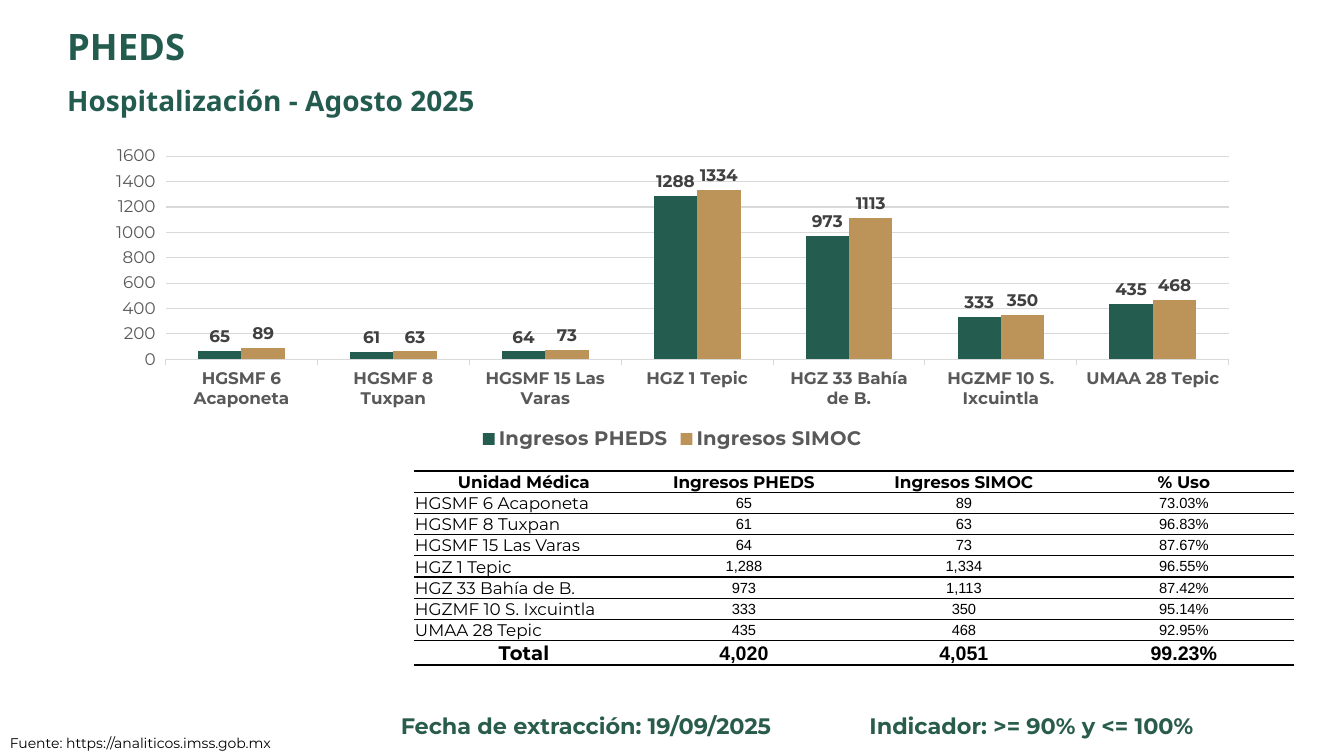
from lxml import etree
from pptx import Presentation
from pptx.chart.data import CategoryChartData as Data
from pptx.dml.color import RGBColor as Rgb
from pptx.enum.chart import XL_CHART_TYPE as Kind, XL_LABEL_POSITION as Spot
from pptx.enum.chart import XL_LEGEND_POSITION as Side, XL_TICK_MARK as Tick
from pptx.enum.text import MSO_ANCHOR as Anchor, MSO_AUTO_SIZE as Fit, PP_ALIGN as Align
from pptx.oxml.ns import qn
from pptx.util import Emu, Pt

HUES = {"title": "235C4F", "note": "2A5C4B", "pheds": "245C4F", "simoc": "BC945A",
        "grid": "D9D9D9", "axis": "595959", "label": "404040", "ink": "000000"}
UNITS = [("HGSMF 6 Acaponeta", 65, 89), ("HGSMF 8 Tuxpan", 61, 63),
         ("HGSMF 15 Las Varas", 64, 73), ("HGZ 1 Tepic", 1288, 1334),
         ("HGZ 33 Bahía de B.", 973, 1113), ("HGZMF 10 S. Ixcuintla", 333, 350),
         ("UMAA 28 Tepic", 435, 468)]
NAMES = ("Ingresos PHEDS", "Ingresos SIMOC")


def px(n):
    return Emu(round(n * 914400 / 100.8))


class Deck:
    """Builds one slide in a shared style, with lengths in px."""

    def __init__(self, wide, high):
        self.prs = Presentation()
        self.prs.slide_width, self.prs.slide_height = px(wide), px(high)
        self.slide = self.prs.slides.add_slide(self.prs.slide_layouts[0])
        self.face = "Montserrat"

    def font(self, font, size, hue, bold=False, face=None):
        font.name, font.size, font.bold = face or self.face, Pt(size), bold
        font.color.rgb = Rgb.from_string(HUES[hue])

    def head(self, spot, text, box, size):
        shape = self.slide.placeholders[spot]
        shape.left, shape.top, shape.width, shape.height = map(px, box)
        frame = shape.text_frame
        frame.text, frame.vertical_anchor = text, Anchor.TOP
        frame.auto_size = Fit.NONE
        para = frame.paragraphs[0]
        para.alignment, para.line_spacing, para.space_before = Align.LEFT, 0.9, Pt(0)
        self.font(para.font, size, "title", True, "Noto Sans")

    def note(self, text, box, size, hue, bold=False, align=Align.LEFT, wrap=True):
        frame = self.slide.shapes.add_textbox(*map(px, box)).text_frame
        frame.text, frame.word_wrap = text, wrap
        frame.auto_size = Fit.SHAPE_TO_FIT_TEXT
        para = frame.paragraphs[0]
        para.alignment = align
        self.font(para.font, size, hue, bold)

    def cell(self, cell, text, size, bold, face, align, anchor):
        cell.text, cell.vertical_anchor = text, anchor
        cell.margin_left = cell.margin_right = cell.margin_top = px(1)
        cell.margin_bottom = 0
        para = cell.text_frame.paragraphs[0]
        para.alignment = align
        self.font(para.font, size, "ink", bold, face)
        props = cell._tc.get_or_add_tcPr()
        for side in "LRTB":
            line = etree.SubElement(props, qn(f"a:ln{side}"), w=str(Pt(1)))
            if side in "LR":
                etree.SubElement(line, qn("a:noFill"))
            else:
                fill = etree.SubElement(line, qn("a:solidFill"))
                etree.SubElement(fill, qn("a:srgbClr"), val=HUES["ink"])
        cell.fill.background()

    def table(self, rows, box, highs):
        grid = self.slide.shapes.add_table(len(rows), len(rows[0]), *map(px, box)).table
        grid.first_row = grid.horz_banding = False
        last = len(rows) - 1
        for r, row in enumerate(rows):
            grid.rows[r].height = px(highs[r])
            edge = r in (0, last)
            for c, text in enumerate(row):
                name = c == 0 and not edge
                face = self.face if c == 0 or r == 0 else "Arial"
                size = 14 if r == last else 12 if name or edge else 10.5
                self.cell(grid.cell(r, c), text, size, edge, face,
                          Align.LEFT if name else Align.CENTER,
                          Anchor.TOP if name else Anchor.MIDDLE)

    def line(self, line, hue):
        line.color.rgb, line.width = Rgb.from_string(HUES[hue]), Pt(0.75)

    def chart(self, units, names, hues, box):
        data = Data()
        data.categories = [unit[0] for unit in units]
        for i, name in enumerate(names, 1):
            data.add_series(name, [unit[i] for unit in units])
        chart = self.slide.shapes.add_chart(Kind.COLUMN_CLUSTERED, *map(px, box), data).chart
        self.font(chart.font, 10, "ink")
        chart.has_title = False
        chart.has_legend = True
        chart.legend.position, chart.legend.include_in_layout = Side.BOTTOM, False
        self.font(chart.legend.font, 14, "axis", True)
        cats, vals = chart.category_axis, chart.value_axis
        self.font(cats.tick_labels.font, 12, "axis", True)
        self.font(vals.tick_labels.font, 12, "axis")
        cats.major_tick_mark = vals.major_tick_mark = Tick.OUTSIDE
        self.line(cats.format.line, "grid")
        vals.format.line.fill.background()
        self.line(vals.major_gridlines.format.line, "grid")
        vals.minimum_scale, vals.maximum_scale, vals.major_unit = 0, 1600, 200
        plot = chart.plots[0]
        plot.gap_width, plot.overlap, plot.vary_by_categories = 150, 0, False
        for series, hue in zip(plot.series, hues):
            series.format.fill.solid()
            series.format.fill.fore_color.rgb = Rgb.from_string(HUES[hue])
            tags = series.data_labels
            tags.show_value, tags.position = True, Spot.OUTSIDE_END
            self.font(tags.font, 12, "label", True)


def main():
    deck = Deck(1344, 756)
    deck.head(0, "PHEDS", (57, 24, 956, 49), 26)
    deck.head(1, "Hospitalización - Agosto 2025", (57, 82, 956, 49), 20)
    deck.note("Fuente: https://analiticos.imss.gob.mx", (0, 730, 294, 27), 10, "ink", wrap=False)
    rows = [("Unidad Médica", *NAMES, "% Uso")]
    rows += [(unit, f"{a:,}", f"{b:,}", f"{a / b:.2%}") for unit, a, b in UNITS]
    rows.append(("Total", "4,020", "4,051", "99.23%"))
    deck.table(rows, (414, 471, 880, 192), [21] * 8 + [24])
    deck.chart(UNITS, NAMES, ("pheds", "simoc"), (93, 140, 1159, 315))
    for text, left, wide in (("Fecha de extracción: 19/09/2025", 332, 508),
                             ("Indicador: >= 90% y <= 100%", 740, 583)):
        deck.note(text, (left, 707, wide, 37), 16, "note", True, Align.CENTER)
    deck.prs.save("out.pptx")


if __name__ == "__main__":
    main()
